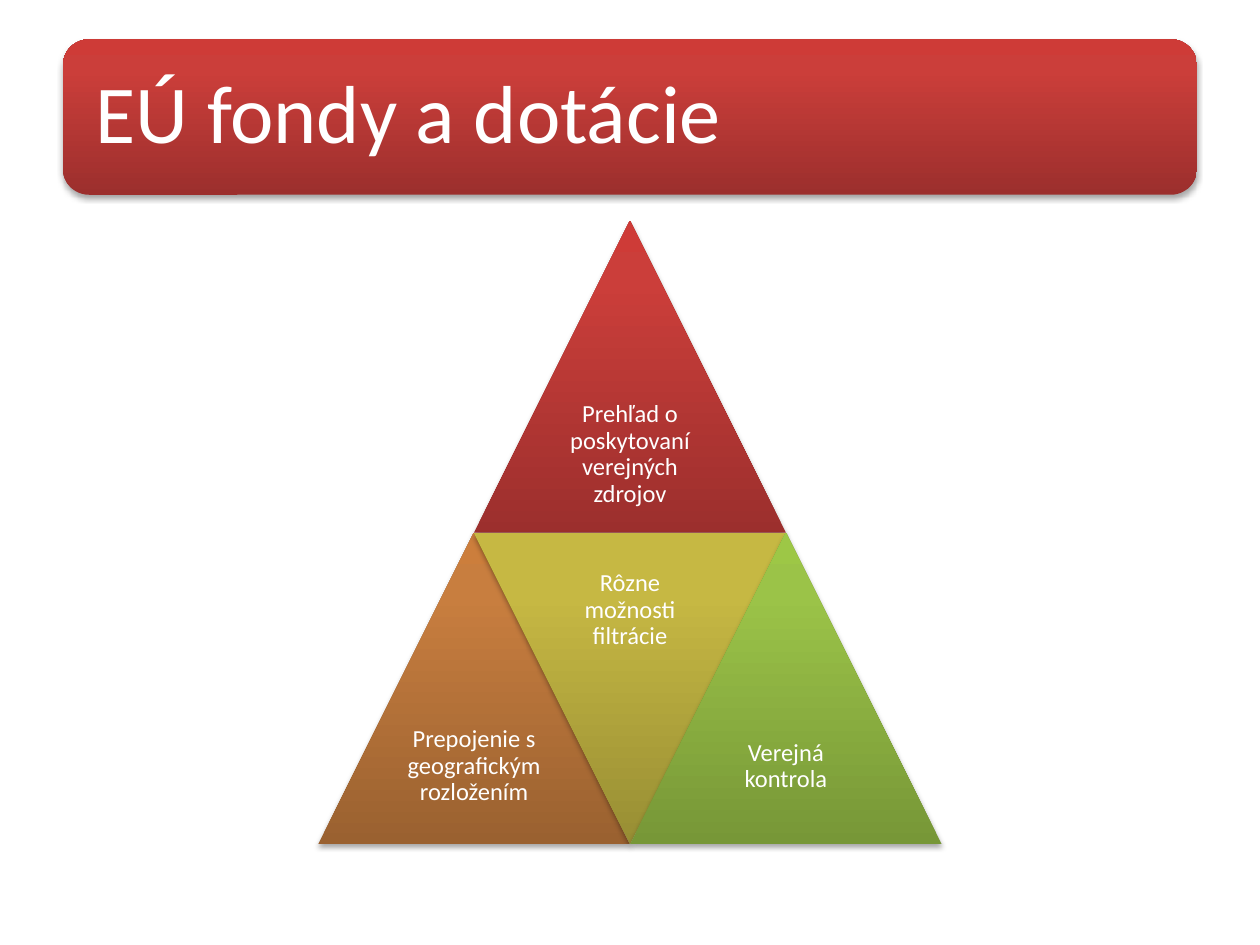
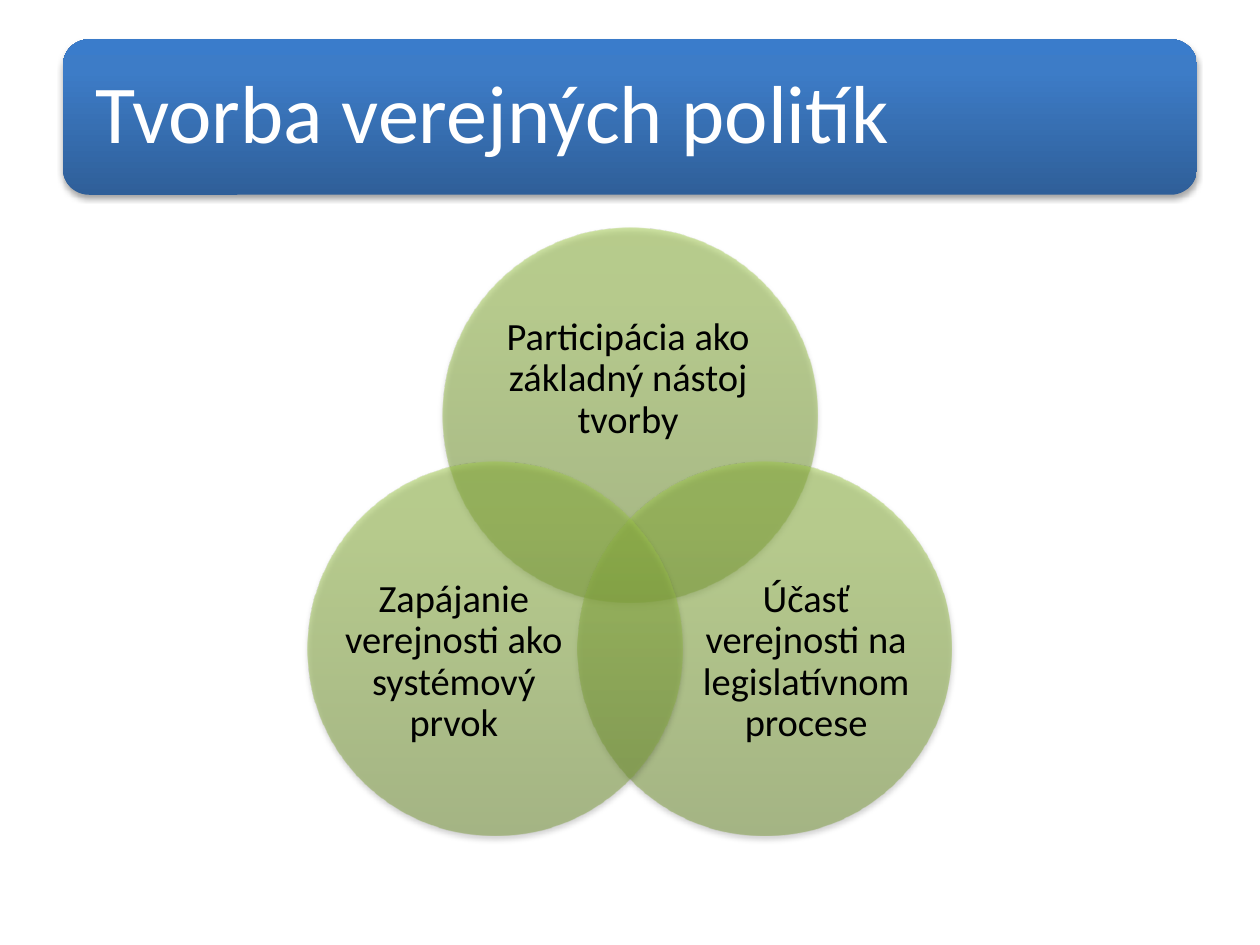
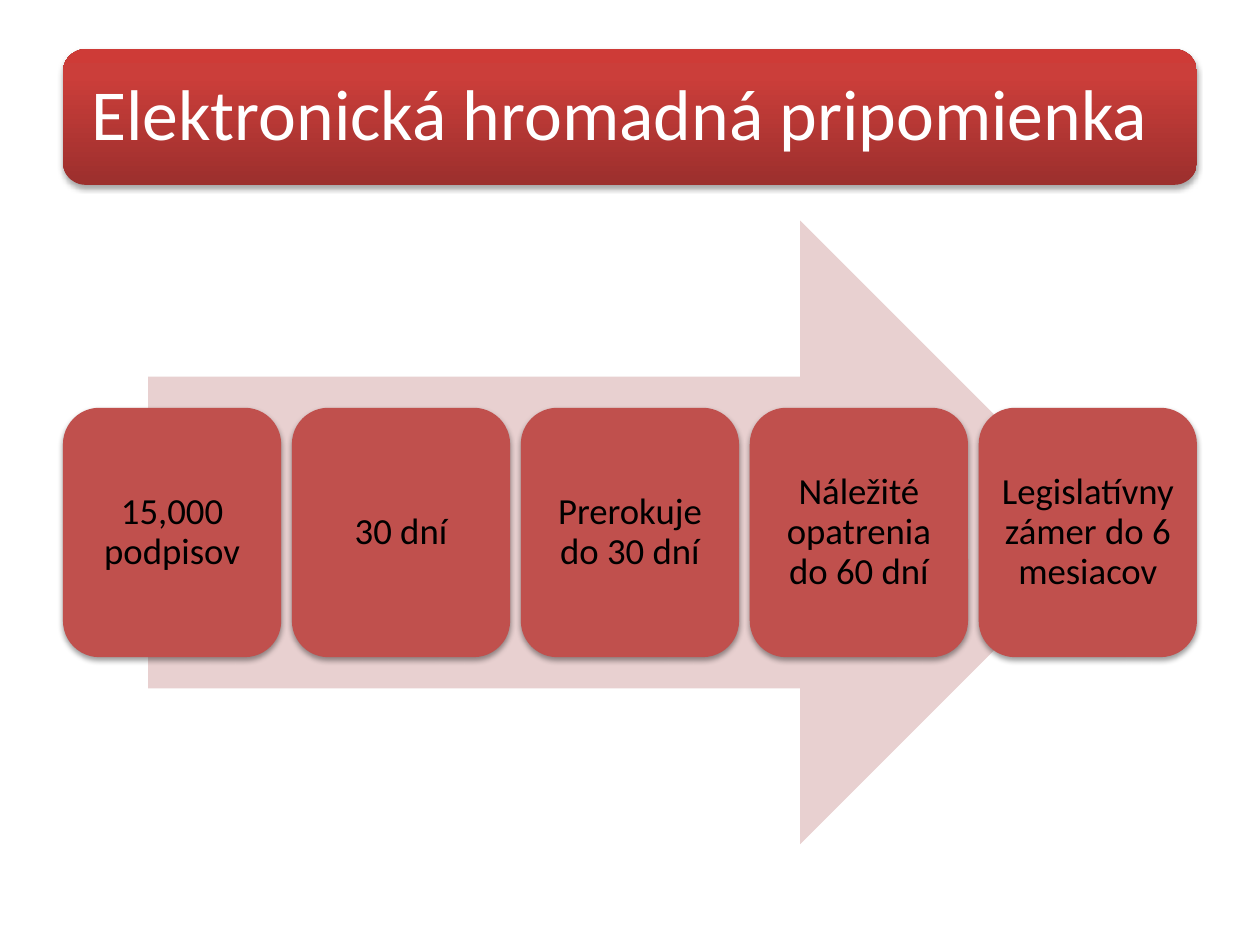
from dataclasses import dataclass
from math import cos, radians, sin

from pptx import Presentation
from pptx.dml.color import RGBColor
from pptx.enum.shapes import MSO_SHAPE
from pptx.enum.text import MSO_ANCHOR, PP_ALIGN
from pptx.oxml import parse_xml
from pptx.oxml.ns import nsdecls, qn
from pptx.util import Cm, Pt

# Content
TITLES = ["EÚ fondy a dotácie", "Tvorba verejných politík",
          "Elektronická hromadná pripomienka"]

# text, colour, column and row in half triangles, pointing down
PYRAMID = [
    ("Prehľad o poskytovaní verejných zdrojov", "red", 1, 0, False),
    ("Prepojenie s geografickým rozložením", "orange", 0, 1, False),
    ("Rôzne možnosti filtrácie", "yellow", 1, 1, True),
    ("Verejná kontrola", "green", 2, 1, False),
]

# text, angle around the centre, text area as fractions of the circle
CIRCLES = [
    ("Participácia ako základný nástoj tvorby", -90, (0.13, 0.18, 0.73, 0.45)),
    ("Účasť verejnosti na legislatívnom procese", 30, (0.31, 0.26, 0.6, 0.55)),
    ("Zapájanie verejnosti ako systémový prvok", 150, (0.09, 0.26, 0.6, 0.55)),
]

STEPS = ["15,000 podpisov", "30 dní", "Prerokuje do 30 dní",
         "Náležité opatrenia do 60 dní", "Legislatívny zámer do 6 mesiacov"]


@dataclass(frozen=True)
class Theme:
    font: str = "Calibri"
    white: str = "FFFFFF"
    black: str = "000000"
    step: str = "C0504D"
    arrow: str = "E8D0D0"
    title_size: int = 47
    long_title_size: int = 41
    pyramid_size: int = 14
    circle_size: int = 22
    step_size: int = 21


THEME = Theme()

# Gradient colours from bottom to top
GRADIENTS = {
    "red": ("9C2F2D", "CB3E3A", "CE3B37"),
    "orange": ("9A6130", "C87E3F", "CC7E3C"),
    "yellow": ("988E34", "C6B843", "C9BB41"),
    "green": ("779737", "9BC348", "9DC746"),
    "blue": ("2F5F99", "3D7CC7", "3A7CCB"),
}
STOPS = (0, 80, 100)

# Layout in centimetres
SLIDE_W, SLIDE_H = 25.4, 19.05
MARGIN = 1.27
BODY_W = SLIDE_W - 2 * MARGIN
BODY_TOP, BODY_H = 4.45, 12.57
CENTRE_X = SLIDE_W / 2
TITLE_MIDDLE = 2.36
CORNER_INSET = 0.05  # share of the short side that rounded corners take


def set_gradient(s, name, alpha):
    stops = "".join(
        f'<a:gs pos="{pos * 1000}"><a:srgbClr val="{color}">'
        f'<a:alpha val="{alpha * 1000}"/></a:srgbClr></a:gs>'
        for pos, color in zip(STOPS, GRADIENTS[name]))
    grad = parse_xml(
        f'<a:gradFill {nsdecls("a")} rotWithShape="0"><a:gsLst>{stops}</a:gsLst>'
        '<a:lin ang="16200000" scaled="0"/></a:gradFill>')
    s.fill.background()
    props = s._element.spPr
    props.replace(props.find(qn("a:noFill")), grad)


def set_shadow(s, alpha, distance):
    s._element.spPr.find(qn("a:effectLst")).append(parse_xml(
        f'<a:outerShdw {nsdecls("a")} blurRad="{Pt(3.1)}" dist="{Pt(distance)}" '
        'dir="5400000" rotWithShape="0"><a:srgbClr val="000000">'
        f'<a:alpha val="{alpha * 1000}"/></a:srgbClr></a:outerShdw>'))


def add_box(slide, kind, box, fill, alpha=100, shadow=(35, 1.8)):
    """Add a shape filled with a named gradient or a plain colour."""
    s = slide.shapes.add_shape(kind, *map(Cm, box))
    s.line.fill.background()
    s.shadow.inherit = False
    if fill in GRADIENTS:
        set_gradient(s, fill, alpha)
    else:
        s.fill.solid()
        s.fill.fore_color.rgb = RGBColor.from_string(fill)
    if shadow:
        set_shadow(s, *shadow)
    return s


def add_label(slide, box, text, size, color, inset=0, align=PP_ALIGN.CENTER):
    tf = slide.shapes.add_textbox(*map(Cm, box)).text_frame
    tf.word_wrap = True
    tf.vertical_anchor = MSO_ANCHOR.MIDDLE
    tf.margin_left = tf.margin_right = tf.margin_top = tf.margin_bottom = Cm(inset)
    tf.text = text
    p = tf.paragraphs[0]
    p.alignment = align
    p.line_spacing = 0.9
    font = p.runs[0].font
    font.name, font.size = THEME.font, Pt(size)
    font.color.rgb = RGBColor.from_string(color)


def part(box, fractions):
    """Return the area of a box given by fractions of its size."""
    x, y, w, h = box
    fx, fy, fw, fh = fractions
    return x + fx * w, y + fy * h, fw * w, fh * h


def inside_corners(box):
    x, y, w, h = box
    d = CORNER_INSET * min(w, h)
    return x + d, y + d, w - 2 * d, h - 2 * d


def add_title(slide, text, color, size=THEME.title_size):
    height = size / 15
    box = (MARGIN, TITLE_MIDDLE - height / 2, BODY_W, height)
    add_box(slide, MSO_SHAPE.ROUNDED_RECTANGLE, box, color)
    add_label(slide, inside_corners(box), text, size, THEME.white,
              0.16 * height, PP_ALIGN.LEFT)


def add_pyramid(slide):
    side = BODY_H / 2
    for text, color, col, row, down in PYRAMID:
        box = (CENTRE_X - side + col * side / 2, BODY_TOP + row * side, side, side)
        s = add_box(slide, MSO_SHAPE.ISOSCELES_TRIANGLE, box, color)
        s.rotation = 180 if down else 0
        area = part(box, (0.25, 0 if down else 0.5, 0.5, 0.5))
        add_label(slide, area, text, THEME.pyramid_size, THEME.white, 0.15)


def add_circles(slide):
    diameter, orbit = 0.6 * BODY_H, BODY_H / 4
    centre_y = 11.51
    for text, angle, fractions in CIRCLES:
        a = radians(angle)
        box = (CENTRE_X + orbit * cos(a) - diameter / 2,
               centre_y + orbit * sin(a) - diameter / 2, diameter, diameter)
        add_box(slide, MSO_SHAPE.OVAL, box, "green", alpha=50)
        add_label(slide, part(box, fractions), text, THEME.circle_size, THEME.black)


def add_steps(slide):
    arrow_w = 0.85 * BODY_W
    add_box(slide, MSO_SHAPE.RIGHT_ARROW,
            (CENTRE_X - arrow_w / 2, BODY_TOP, arrow_w, BODY_H),
            THEME.arrow, shadow=None)
    w, h = 4.4, 0.4 * BODY_H
    pitch = (BODY_W - w) / (len(STEPS) - 1)
    for i, text in enumerate(STEPS):
        box = (MARGIN + i * pitch, BODY_TOP + 0.3 * BODY_H, w, h)
        add_box(slide, MSO_SHAPE.ROUNDED_RECTANGLE, box, THEME.step,
                shadow=(38, 1.6))
        add_label(slide, inside_corners(box), text, THEME.step_size,
                  THEME.black, 0.22)


def main():
    prs = Presentation()
    prs.slide_width, prs.slide_height = Cm(SLIDE_W), Cm(SLIDE_H)
    funds, policy, petition = (
        prs.slides.add_slide(prs.slide_layouts[6]) for _ in TITLES)

    # Funds and grants
    add_title(funds, TITLES[0], "red")
    add_pyramid(funds)

    # Public policy making
    add_title(policy, TITLES[1], "blue")
    add_circles(policy)

    # Electronic petition
    add_title(petition, TITLES[2], "red", THEME.long_title_size)
    add_steps(petition)

    prs.save("out.pptx")


if __name__ == "__main__":
    main()
